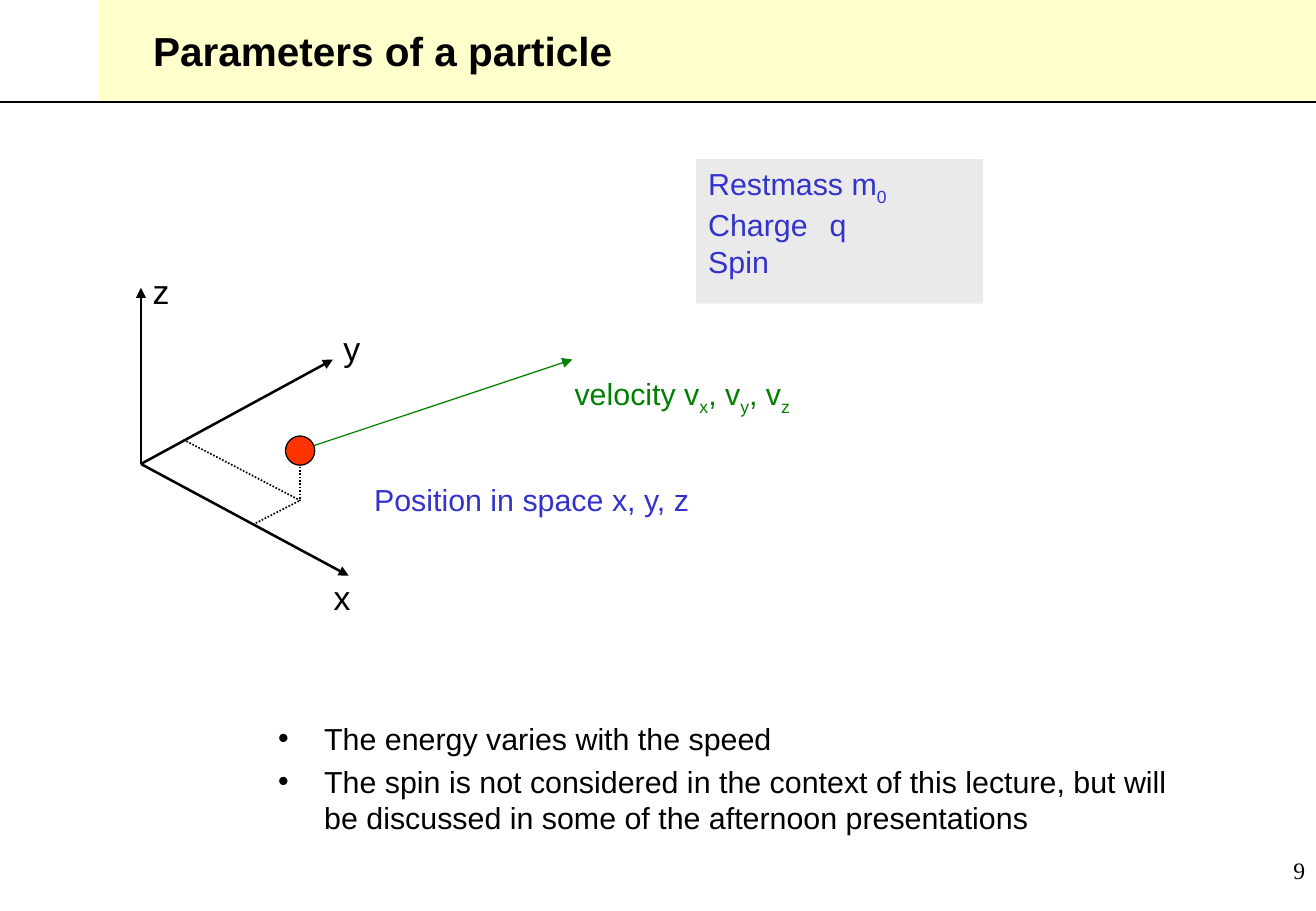
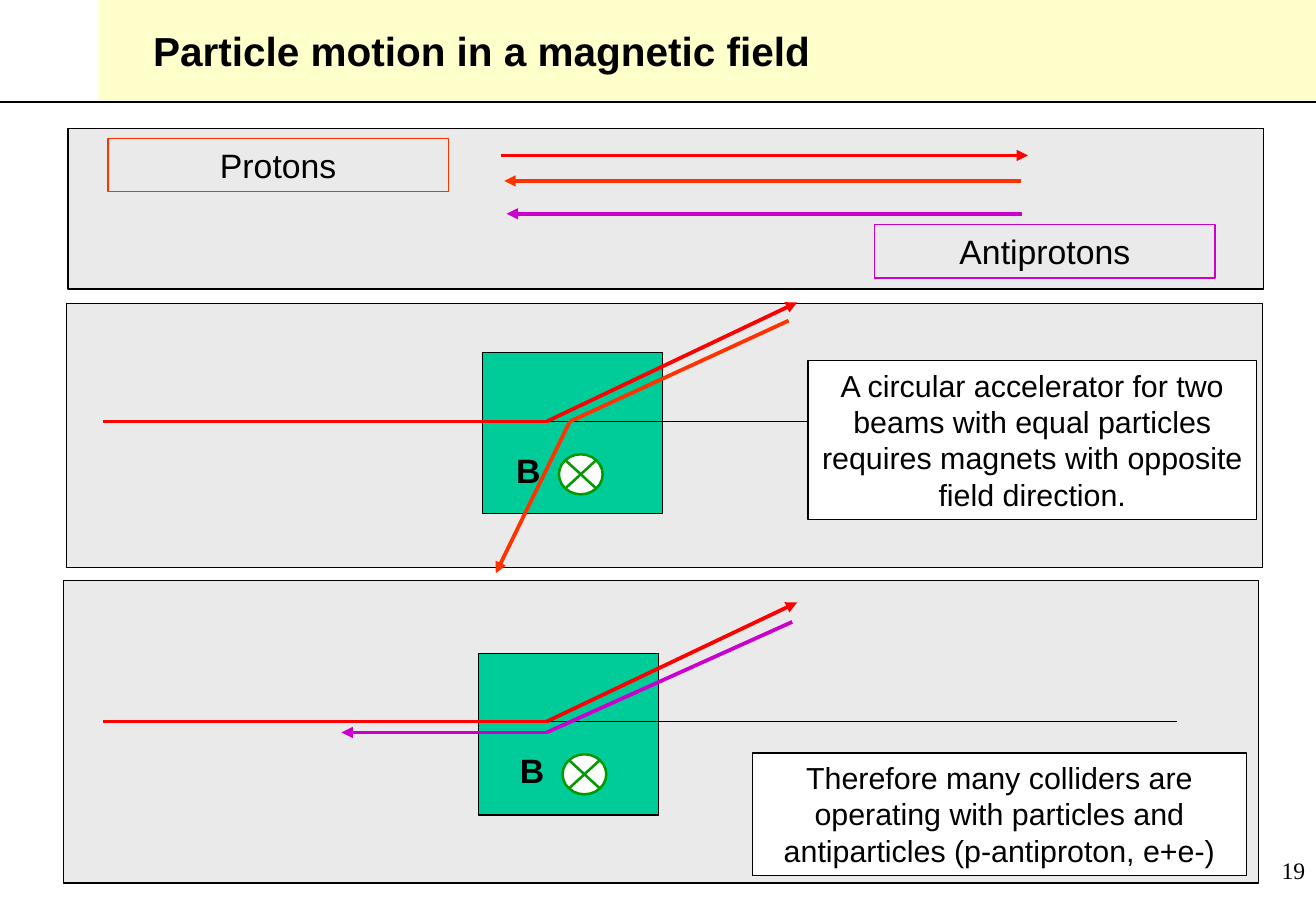
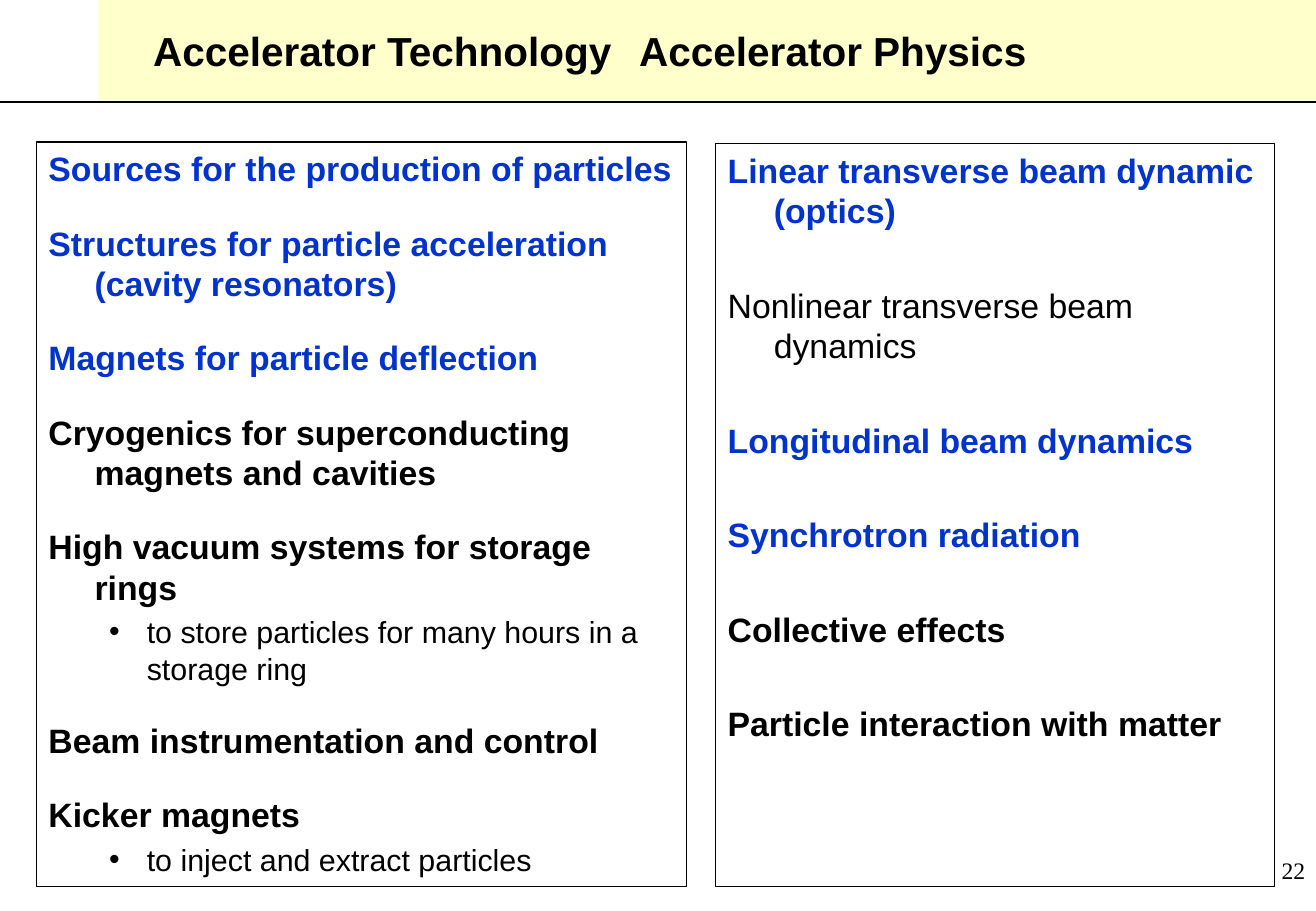
import dataclasses
import itertools
from typing import Any, Optional

import pptx
import pptx.dml.color
import pptx.enum.dml
import pptx.enum.shapes
import pptx.enum.text
import pptx.oxml.ns
import pptx.oxml.xmlchemy
import pptx.util

PX = 9144  # 100 px to the inch

RGB = pptx.dml.color.RGBColor
BLACK = RGB(0x00, 0x00, 0x00)
WHITE = RGB(0xFF, 0xFF, 0xFF)
CREAM = RGB(0xFF, 0xFF, 0xCC)
GREY = RGB(0xEA, 0xEA, 0xEA)
BLUE = RGB(0x00, 0x33, 0xCC)
INDIGO = RGB(0x33, 0x33, 0xCC)
GREEN = RGB(0x00, 0x80, 0x00)
FIELD_GREEN = RGB(0x00, 0x99, 0x00)
MAGNET_GREEN = RGB(0x00, 0xCC, 0x99)
RED = RGB(0xFF, 0x00, 0x00)
ORANGE = RGB(0xFF, 0x33, 0x00)
PURPLE = RGB(0xCC, 0x00, 0xCC)

SHAPE = pptx.enum.shapes.MSO_SHAPE
ALIGN = pptx.enum.text.PP_ALIGN
ANCHOR = pptx.enum.text.MSO_ANCHOR
DOTTED = pptx.enum.dml.MSO_LINE.ROUND_DOT

Box = tuple[int, int, int, int]
Point = tuple[int, int]

WIDTH, HEIGHT = 1083, 750


@dataclasses.dataclass(frozen=True)
class Para:
    """One paragraph; "_" sets the next character as a subscript."""
    text: str
    size: int = 18
    color: RGB = BLACK
    bold: bool = False
    font: str = "Arial"
    align: Any = ALIGN.LEFT
    before: float = 0
    left: int = 0
    hang: int = 0
    bullet: bool = False
    tab: int = 0


@dataclasses.dataclass(frozen=True)
class Scene:
    """Two beams crossing a magnet; return_beam is relative to the axis."""
    panel: Box
    magnet: Point
    axis_x: int
    axis_y: int
    field_x: int
    return_color: RGB
    return_beam: list[Point]
    caption: str
    caption_box: Box


def px(n: int) -> pptx.util.Emu:
    return pptx.util.Emu(n * PX)


def add_child(parent: Any, tag: str, **attrs: str) -> Any:
    child = parent.makeelement(pptx.oxml.ns.qn(tag), attrs)
    parent.append(child)
    return child


def add_run(p: Any, text: str, para: Para, subscript: bool = False) -> None:
    if not text:
        return
    r = p.add_run()
    r.text = text
    values = {"size": pptx.util.Pt(para.size), "name": para.font, "bold": para.bold}
    for name, value in values.items():
        setattr(r.font, name, value)
    r.font.color.rgb = para.color
    if subscript:
        r.font._element.set("baseline", "-25000")


def write(sp: Any, paras: list[Para], wrap: bool = True,
          anchor: Any = ANCHOR.TOP, inset: int = 10) -> None:
    tf = sp.text_frame
    values = {"word_wrap": wrap, "vertical_anchor": anchor, "margin_left": px(inset)}
    for name, value in values.items():
        setattr(tf, name, value)
    for i, para in enumerate(paras):
        p = tf.add_paragraph() if i else tf.paragraphs[0]
        p.alignment = para.align
        p.space_before = pptx.util.Pt(para.before)
        pPr = p._p.get_or_add_pPr()
        pPr.set("marL", str(px(para.left)))
        pPr.set("indent", str(px(-para.hang)))
        if para.bullet:
            add_child(pPr, "a:buFont", typeface="Arial")
            add_child(pPr, "a:buChar", char="•")
        if para.tab:
            tabs = add_child(pPr, "a:tabLst")
            add_child(tabs, "a:tab", pos=str(px(para.tab)), algn="l")
        plain, *marked = para.text.split("_")
        add_run(p, plain, para)
        for part in marked:
            add_run(p, part[0], para, subscript=True)
            add_run(p, part[1:], para)


def add_shape(s: Any, box: Box, fill: Optional[RGB] = None, line: Optional[RGB] = None,
              width: float = 0.75, kind: Any = SHAPE.RECTANGLE) -> Any:
    sp = s.shapes.add_shape(kind, *map(px, box))
    sp.shadow.inherit = False
    if fill is None:
        sp.fill.background()
    else:
        sp.fill.solid()
        sp.fill.fore_color.rgb = fill
    if line is None:
        sp.line.fill.background()
    else:
        sp.line.color.rgb = line
        sp.line.width = pptx.util.Pt(width)
    return sp


def add_text(s: Any, box: Box, paras: list[Para], wrap: bool = True) -> None:
    write(s.shapes.add_textbox(*map(px, box)), paras, wrap)


def add_line(s: Any, start: Point, end: Point, color: RGB = BLACK, width: float = 0.75,
             arrow: bool = False, dash: Any = None) -> None:
    cx = s.shapes.add_connector(pptx.enum.shapes.MSO_CONNECTOR.STRAIGHT,
                                *map(px, start + end))
    cx.line.color.rgb = color
    cx.line.width = pptx.util.Pt(width)
    if dash is not None:
        cx.line.dash_style = dash
    if arrow:
        add_child(cx.line._get_or_add_ln(), "a:tailEnd", type="triangle")
    add_child(cx._element.spPr, "a:effectLst")


def add_beam(s: Any, points: list[Point], color: RGB) -> None:
    """Connected segments with an arrowhead on the last one."""
    for start, end in itertools.pairwise(points):
        add_line(s, start, end, color, 2.25, arrow=end == points[-1])


def new_slide(prs: Any, title: str, number: int, tab: int = 0) -> Any:
    s = prs.slides.add_slide(prs.slide_layouts[6])
    band = add_shape(s, (81, 0, WIDTH - 81, 83), CREAM)
    write(band, [Para(title, 24, bold=True, tab=tab)], anchor=ANCHOR.MIDDLE, inset=45)
    add_line(s, (0, 84), (WIDTH, 84))
    add_text(s, (858, 700, 226, 50),
             [Para(str(number), 14, font="Times New Roman", align=ALIGN.RIGHT)])
    return s


def parameters_slide(prs: Any) -> None:
    s = new_slide(prs, "Parameters of a particle", 9)
    item = {"left": 38, "hang": 38, "bullet": True}
    add_text(s, (219, 588, 780, 102), [
        Para("The energy varies with the speed", **item),
        Para("The spin is not considered in the context of this lecture, but will "
             "be discussed in some of the afternoon presentations", before=3.6, **item),
    ])
    properties = add_shape(s, (573, 131, 236, 119), GREY)
    write(properties, [Para("Restmass m_0", color=INDIGO),
                       Para("Charge\tq", color=INDIGO, tab=121),
                       Para("Spin", color=INDIGO)])

    add_line(s, (258, 367), (471, 296), GREEN, arrow=True)
    add_text(s, (463, 304, 201, 40), [Para("velocity v_x, v_y, v_z", color=GREEN)], wrap=False)
    add_text(s, (298, 391, 282, 40), [Para("Position in space x, y, z", color=INDIGO)],
             wrap=False)

    origin = (116, 382)
    axes = {"z": ((116, 237), (101, 218)),
            "x": ((287, 474), (250, 470)),
            "y": ((274, 296), (258, 265))}
    for name, (tip, corner) in axes.items():
        add_line(s, origin, tip, width=1.5, arrow=True)
        add_text(s, corner + (63, 43), [Para(name, 20, align=ALIGN.CENTER)])

    foot = (247, 412)
    for start in ((247, 376), (208, 432), (151, 362)):
        add_line(s, start, foot, width=1, dash=DOTTED)
    add_shape(s, (235, 359, 24, 24), ORANGE, BLACK, kind=SHAPE.OVAL)


def draw_scene(s: Any, scene: Scene) -> None:
    y = scene.axis_y
    add_shape(s, scene.panel, GREY, BLACK)
    add_shape(s, scene.magnet + (148, 133), MAGNET_GREEN, BLACK)
    add_line(s, (scene.axis_x, y), (scene.axis_x + 858, y))
    add_beam(s, [(x, y + dy) for x, dy in scene.return_beam], scene.return_color)
    add_beam(s, [(85, y), (450, y), (656, y - 98)], RED)
    add_text(s, (scene.field_x, y + 18, 30, 43),
             [Para("B", 20, bold=True, align=ALIGN.CENTER)])
    add_shape(s, (scene.field_x + 45, y + 27, 36, 33), WHITE, FIELD_GREEN, 1.5,
              SHAPE.FLOWCHART_SUMMING_JUNCTION)
    caption = add_shape(s, scene.caption_box, WHITE, BLACK)
    write(caption, [Para(scene.caption, align=ALIGN.CENTER)])


def magnetic_field_slide(prs: Any) -> None:
    s = new_slide(prs, "Particle motion in a magnetic field", 19)
    add_shape(s, (56, 106, 984, 132), GREY, BLACK)
    for start, end, y, color in ((412, 846, 128, RED), (840, 415, 149, ORANGE),
                                 (841, 417, 176, PURPLE)):
        add_beam(s, [(start, y), (end, y)], color)
    for name, corner, color in (("Protons", (89, 114), ORANGE),
                                ("Antiprotons", (720, 185), PURPLE)):
        label = add_shape(s, corner + (280, 44), line=color)
        write(label, [Para(name, 20, align=ALIGN.CENTER)])

    scenes = [
        Scene((55, 250, 984, 217), (397, 290), 114, 347, 415,
              ORANGE, [(649, -83), (469, 0), (408, 125)],
              "A circular accelerator for two beams with equal particles "
              "requires magnets with opposite field direction.",
              (665, 297, 369, 131)),
        Scene((52, 478, 984, 249), (394, 538), 111, 594, 418,
              PURPLE, [(652, -82), (450, 9), (281, 9)],
              "Therefore many colliders are operating with particles and "
              "antiparticles (p-antiproton, e+e-)",
              (619, 620, 407, 101)),
    ]
    for scene in scenes:
        draw_scene(s, scene)


def topic(text: str, before: float, color: RGB = BLACK, bold: bool = True) -> Para:
    return Para(text, 20, color, bold, before=before, left=38, hang=38)


def detail(text: str) -> Para:
    return Para(text, before=3.6, left=81, hang=31, bullet=True)


def topics_slide(prs: Any) -> None:
    s = new_slide(prs, "Accelerator Technology\tAccelerator Physics", 22, tab=518)
    wide, wider = 20, 32
    technology = [
        topic("Sources for the production of particles", 0, BLUE),
        topic("Structures for particle acceleration (cavity resonators)", wide, BLUE),
        topic("Magnets for particle deflection", wide, BLUE),
        topic("Cryogenics for superconducting magnets and cavities", wide),
        topic("High vacuum systems for storage rings", wide),
        detail("to store particles for many hours in a storage ring"),
        topic("Beam instrumentation and control", wide),
        topic("Kicker magnets", wide),
        detail("to inject and extract particles"),
    ]
    physics = [
        topic("Linear transverse beam dynamic (optics)", 0, BLUE),
        topic("Nonlinear transverse beam dynamics", wider, bold=False),
        topic("Longitudinal beam dynamics", wider, BLUE),
        topic("Synchrotron radiation", wider, BLUE),
        topic("Collective effects", wider),
        topic("Particle interaction with matter", wider),
    ]
    for box, paras in (((30, 117, 535, 613), technology), ((589, 118, 460, 612), physics)):
        write(add_shape(s, box, line=BLACK), paras)


def main() -> None:
    prs = pptx.Presentation()
    prs.slide_width, prs.slide_height = px(WIDTH), px(HEIGHT)
    parameters_slide(prs)
    magnetic_field_slide(prs)
    topics_slide(prs)
    prs.save("out.pptx")


if __name__ == "__main__":
    main()
